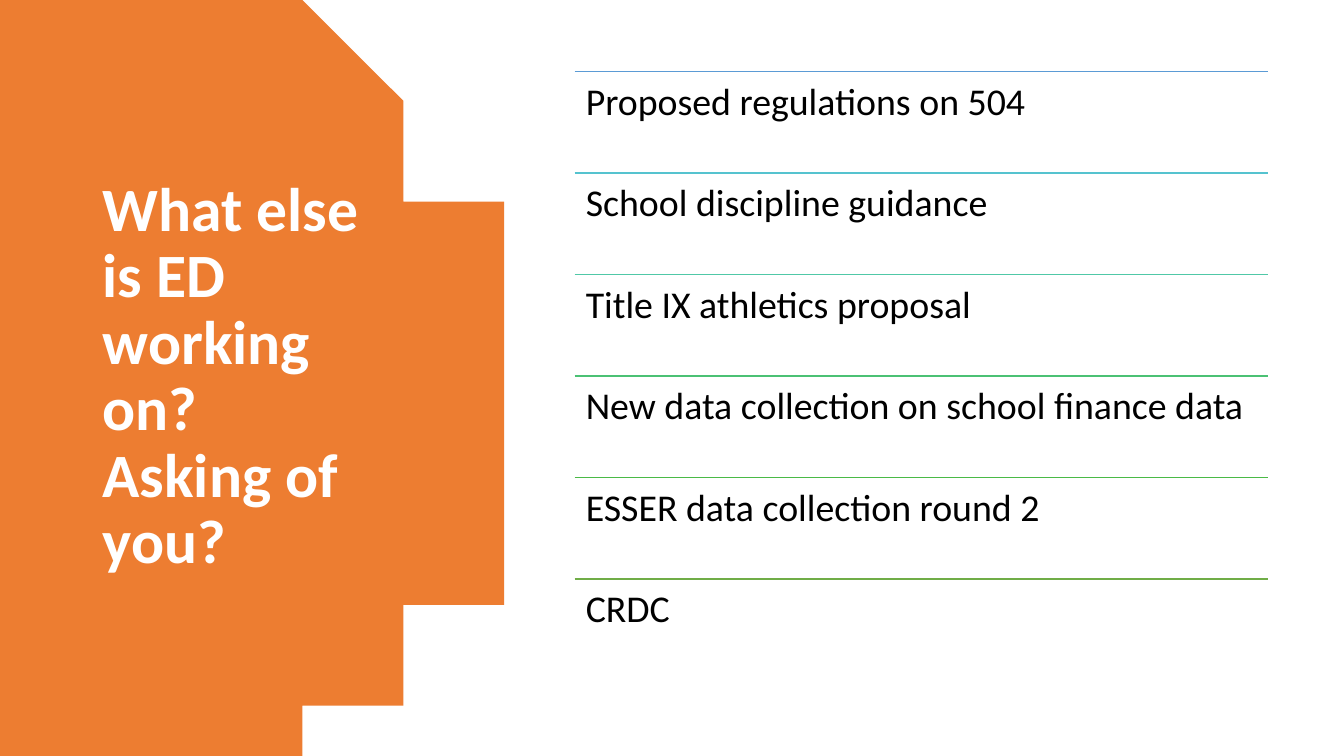
"""Build a slide listing the department's current work beside a curved title panel."""
import pptx
import pptx.dml.color
import pptx.enum.shapes
import pptx.enum.text
import pptx.oxml.ns
import pptx.util
from lxml import etree

Inches = pptx.util.Inches
Pt = pptx.util.Pt
RGBColor = pptx.dml.color.RGBColor

TITLE = "What else is ED working on?\vAsking of you?"
TOPICS = [
    ("Proposed regulations on 504", RGBColor(0x5B, 0x9B, 0xD5)),
    ("School discipline guidance", RGBColor(0x55, 0xC3, 0xCF)),
    ("Title IX athletics proposal", RGBColor(0x50, 0xC8, 0xA7)),
    ("New data collection on school finance data", RGBColor(0x4B, 0xC1, 0x74)),
    ("ESSER data collection round 2", RGBColor(0x4A, 0xBA, 0x46)),
    ("CRDC", RGBColor(0x70, 0xAD, 0x47)),
]
ORANGE = RGBColor(0xED, 0x7D, 0x31)
WHITE = RGBColor(0xFF, 0xFF, 0xFF)
BLACK = RGBColor(0x00, 0x00, 0x00)
FONT = "Calibri"

PAGE_WIDTH, PAGE_HEIGHT = 13.33, 7.5
UPPER_CURVE = [(2.83, 0), (4.09, 0.77), (4.93, 2.16), (4.93, 3.75)]
CURVE_STEPS = 40
LIST_LEFT, LIST_TOP, LIST_WIDTH = 5.7, 0.71, 6.88
ROW_HEIGHT = 1.007
ROW_INSET = 0.11


def curve_point(controls, t):
    weights = ((1 - t) ** 3, 3 * t * (1 - t) ** 2, 3 * t ** 2 * (1 - t), t ** 3)
    return tuple(sum(w * point[axis] for w, point in zip(weights, controls))
                 for axis in (0, 1))


def add_panel(page):
    upper = [curve_point(UPPER_CURVE, step / CURVE_STEPS)
             for step in range(CURVE_STEPS + 1)]
    lower = [(x, PAGE_HEIGHT - y) for x, y in reversed(upper[:-1])]
    outline = upper + lower + [(0, PAGE_HEIGHT)]
    builder = page.shapes.build_freeform(0, 0, scale=Inches(1))
    builder.add_line_segments(outline, close=True)
    panel = builder.convert_to_shape()
    panel.shadow.inherit = False
    panel.fill.solid()
    panel.fill.fore_color.rgb = ORANGE
    panel.line.fill.background()


def add_text(page, text, left, top, width, height, size, color, bold=False):
    box = page.shapes.add_textbox(Inches(left), Inches(top), Inches(width), Inches(height))
    frame = box.text_frame
    frame.word_wrap = True
    para = frame.paragraphs[0]
    para.text = text
    para.line_spacing = 0.9
    for span in para.runs:
        span.font.name = FONT
        span.font.size = Pt(size)
        span.font.bold = bold
        span.font.color.rgb = color
    return frame


def add_rule(page, top, color):
    rule = page.shapes.add_connector(
        pptx.enum.shapes.MSO_CONNECTOR.STRAIGHT,
        Inches(LIST_LEFT), Inches(top), Inches(LIST_LEFT + LIST_WIDTH), Inches(top))
    rule.line.color.rgb = color
    rule.line.width = Pt(1)
    etree.SubElement(rule.element.spPr, pptx.oxml.ns.qn("a:effectLst"))


def main():
    deck = pptx.Presentation()
    deck.slide_width = Inches(PAGE_WIDTH)
    deck.slide_height = Inches(PAGE_HEIGHT)
    page = deck.slides.add_slide(deck.slide_layouts[6])

    add_panel(page)
    title = add_text(page, TITLE, 0.92, 0.7, 3.23, 6.09, 44, WHITE, bold=True)
    title.vertical_anchor = pptx.enum.text.MSO_ANCHOR.MIDDLE

    for row, (topic, color) in enumerate(TOPICS):
        top = LIST_TOP + row * ROW_HEIGHT
        add_rule(page, top, color)
        frame = add_text(page, topic, LIST_LEFT, top, LIST_WIDTH, ROW_HEIGHT, 27, BLACK)
        frame.margin_left = frame.margin_right = Inches(ROW_INSET)
        frame.margin_top = frame.margin_bottom = Inches(ROW_INSET)

    deck.save("out.pptx")


if __name__ == "__main__":
    main()
